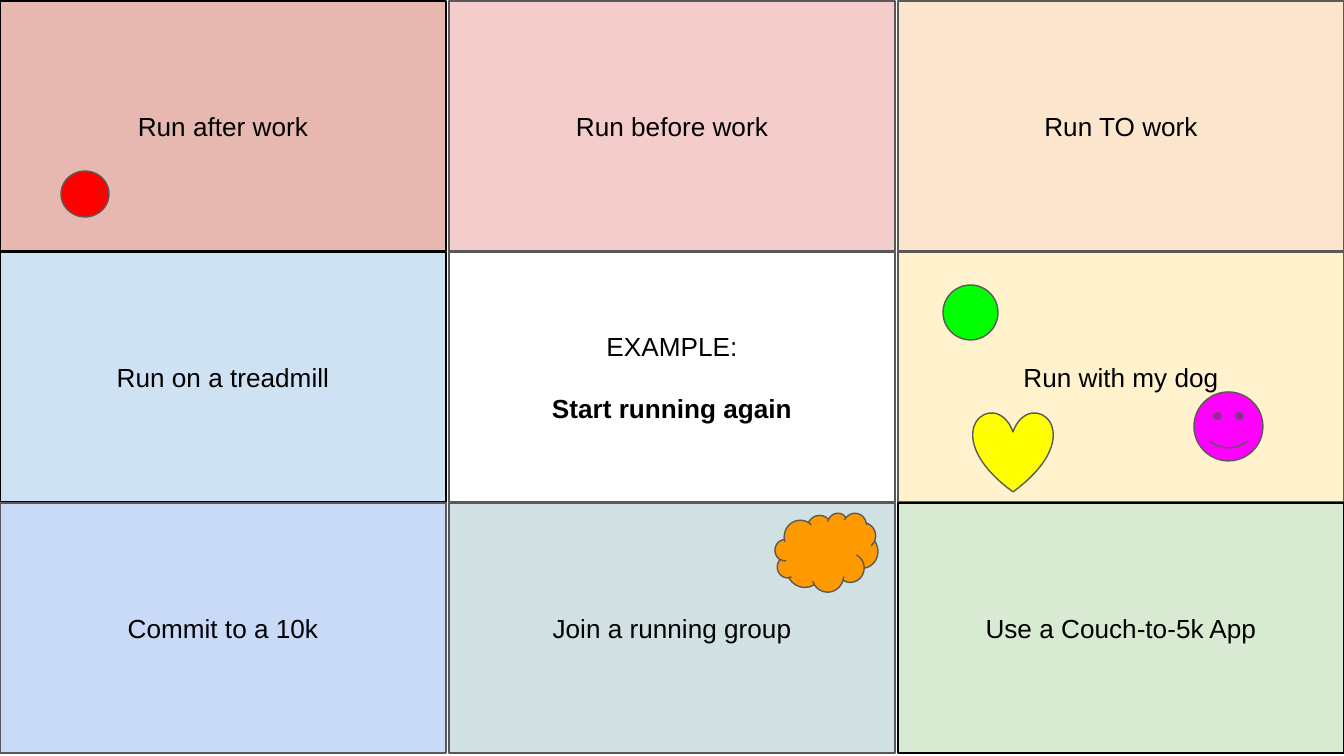
from dataclasses import dataclass

from pptx import Presentation
from pptx.dml.color import RGBColor
from pptx.enum.shapes import MSO_SHAPE
from pptx.enum.text import MSO_ANCHOR, PP_ALIGN
from pptx.util import Emu, Inches, Pt

EMU_PER_PX = 914400 * 10 / 1344
SLIDE_WIDTH, SLIDE_HEIGHT = 1344, 756
CELL_WIDTH, CELL_HEIGHT = 446, 250
COLUMN_STEP, ROW_STEP = 449, 251
GRID_TOP = 1
BLACK, GREY = "000000", "595959"


@dataclass
class Cell:
    column: int
    row: int
    text: str
    fill: str
    line: str = GREY
    bold_text: str = ""


@dataclass
class Vote:
    kind: MSO_SHAPE
    left: int
    top: int
    width: int
    height: int
    fill: str


CELLS = [
    Cell(0, 0, "Run after work", "E6B8AF", BLACK),
    Cell(1, 0, "Run before work", "F4CCCC"),
    Cell(2, 0, "Run TO work", "FCE5CD"),
    Cell(2, 1, "Run with my dog", "FFF2CC"),
    Cell(2, 2, "Use a Couch-to-5k App", "D9EAD3", BLACK),
    Cell(1, 2, "Join a running group", "D0E0E3"),
    Cell(1, 1, "EXAMPLE:", "FFFFFF", bold_text="Start running again"),
    Cell(0, 1, "Run on a treadmill", "CFE2F3", BLACK),
    Cell(0, 2, "Commit to a 10k", "C9DAF8"),
]

VOTES = [
    Vote(MSO_SHAPE.OVAL, 61, 171, 48, 46, "FF0000"),
    Vote(MSO_SHAPE.HEART, 973, 412, 80, 80, "FFFF00"),
    Vote(MSO_SHAPE.CLOUD, 775, 513, 103, 79, "FF9900"),
    Vote(MSO_SHAPE.OVAL, 943, 285, 55, 55, "00FF00"),
    Vote(MSO_SHAPE.SMILEY_FACE, 1194, 392, 69, 69, "FF00FF"),
]


def px(length: int) -> Emu:
    return Emu(round(length * EMU_PER_PX))


def color(value: str) -> RGBColor:
    return RGBColor.from_string(value)


def add_outlined_shape(slide, kind: MSO_SHAPE, box: tuple[int, int, int, int],
                       fill: str, line: str, line_width: float):
    shape = slide.shapes.add_shape(kind, *map(px, box))
    shape.shadow.inherit = False
    shape.fill.solid()
    shape.fill.fore_color.rgb = color(fill)
    shape.line.color.rgb = color(line)
    shape.line.width = Pt(line_width)
    return shape


def add_text(paragraph, text: str, bold: bool = False) -> None:
    paragraph.alignment = PP_ALIGN.CENTER
    run = paragraph.add_run()
    run.text = text
    run.font.name = "Arial"
    run.font.size = Pt(14)
    run.font.bold = bold
    run.font.color.rgb = color(BLACK)


def add_cell(slide, cell: Cell) -> None:
    box = (cell.column * COLUMN_STEP, GRID_TOP + cell.row * ROW_STEP,
           CELL_WIDTH, CELL_HEIGHT)
    shape = add_outlined_shape(slide, MSO_SHAPE.RECTANGLE, box,
                               cell.fill, cell.line, 1.5)
    frame = shape.text_frame
    frame.word_wrap = True
    frame.vertical_anchor = MSO_ANCHOR.MIDDLE
    frame.margin_left = frame.margin_right = Inches(0.1)
    frame.margin_top = frame.margin_bottom = Inches(0.1)
    add_text(frame.paragraphs[0], cell.text)
    if cell.bold_text:
        paragraph = frame.add_paragraph()
        paragraph.space_before = Pt(16.5)
        add_text(paragraph, cell.bold_text, bold=True)


def add_vote(slide, vote: Vote) -> None:
    box = (vote.left, vote.top, vote.width, vote.height)
    add_outlined_shape(slide, vote.kind, box, vote.fill, GREY, 0.75)


def main() -> None:
    presentation = Presentation()
    presentation.slide_width = px(SLIDE_WIDTH)
    presentation.slide_height = px(SLIDE_HEIGHT)
    slide = presentation.slides.add_slide(presentation.slide_layouts[6])
    for cell in CELLS:
        add_cell(slide, cell)
    for vote in VOTES:
        add_vote(slide, vote)
    presentation.save("out.pptx")


if __name__ == "__main__":
    main()
